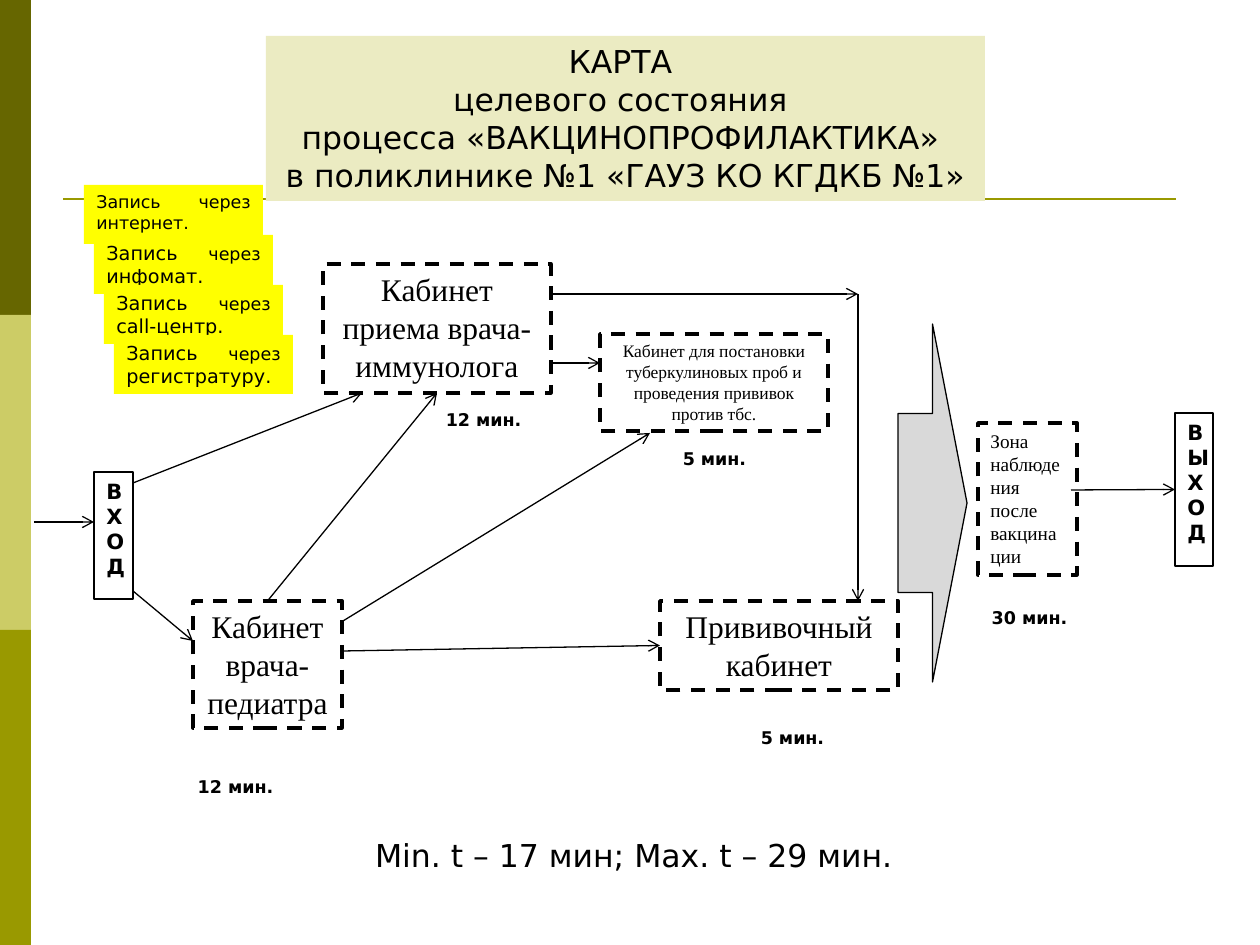
from lxml.etree import SubElement
from pptx import Presentation
from pptx.dml.color import RGBColor
from pptx.enum.dml import MSO_LINE
from pptx.enum.shapes import MSO_CONNECTOR, MSO_SHAPE
from pptx.enum.text import MSO_ANCHOR, MSO_AUTO_SIZE, PP_ALIGN
from pptx.oxml.ns import qn
from pptx.util import Emu, Pt

SCALE = 914400 / 126
BLACK = RGBColor(0x00, 0x00, 0x00)
WHITE = RGBColor(0xFF, 0xFF, 0xFF)
YELLOW = RGBColor(0xFF, 0xFF, 0x00)
CREAM = RGBColor(0xEB, 0xEB, 0xC2)
GREY = RGBColor(0xD9, 0xD9, 0xD9)
DARK_OLIVE = RGBColor(0x66, 0x66, 0x00)
LIGHT_OLIVE = RGBColor(0xCC, 0xCC, 0x66)
OLIVE = RGBColor(0x99, 0x99, 0x00)
SANS = "DejaVu Sans"
SERIF = "Times New Roman"
TOP, LEFT, BOTTOM = 0, 1, 2


def px(value):
    """Turn pixels into EMU."""
    return Emu(round(value * SCALE))


def set_all(target, values):
    """Set every attribute named in a dict of format values."""
    for name, value in values.items():
        setattr(target, name, value)


def write(shape, paragraphs, font, align=PP_ALIGN.CENTER, wrap=True):
    """Write paragraphs, each a list of (text, size) runs, into a shape."""
    frame = shape.text_frame
    set_all(frame, {
        "word_wrap": wrap,
        "vertical_anchor": MSO_ANCHOR.TOP,
        "auto_size": MSO_AUTO_SIZE.NONE if wrap else MSO_AUTO_SIZE.SHAPE_TO_FIT_TEXT,
    })
    for index, runs in enumerate(paragraphs):
        paragraph = frame.add_paragraph() if index else frame.paragraphs[0]
        paragraph.alignment = align
        for text, size in runs:
            run = paragraph.add_run()
            run.text = text
            set_all(run.font, {"size": Pt(size), **font})
            run.font.color.rgb = BLACK


def add_block(slide, box, fill, line_width=0, dash=None, kind=MSO_SHAPE.RECTANGLE):
    """Add a filled preset shape, outlined in black when a width is given."""
    shape = slide.shapes.add_shape(kind, *map(px, box))
    shape.shadow.inherit = False
    shape.fill.solid()
    shape.fill.fore_color.rgb = fill
    if line_width:
        shape.line.color.rgb = BLACK
        set_all(shape.line, {"width": Pt(line_width), "dash_style": dash})
    else:
        shape.line.fill.background()
    return shape


def add_line(slide, start, end, color=BLACK, width=0.75, arrow=True):
    """Add a straight line, with an open arrowhead at its end by default."""
    connector = slide.shapes.add_connector(MSO_CONNECTOR.STRAIGHT, *map(px, (*start, *end)))
    connector.line.color.rgb = color
    connector.line.width = Pt(width)
    if arrow:
        SubElement(connector.line._get_or_add_ln(), qn("a:tailEnd"), type="arrow")
    SubElement(connector._element.spPr, qn("a:effectLst"))
    return connector


def add_label(slide, box, text, size, bold):
    """Add a one-line text box."""
    label = slide.shapes.add_textbox(*map(px, box))
    write(label, [[(text, size)]], {"name": SANS, "bold": bold}, wrap=False)


def add_sidebar(slide, box):
    """Add three stacked colour bands."""
    left, top, width, height = box
    band = height // 3
    for index, color in enumerate((DARK_OLIVE, LIGHT_OLIVE, OLIVE)):
        add_block(slide, (left, top + index * band, width, band), color)


def add_header(slide, box):
    """Add the rule and the title panel standing on it."""
    left, top, width, height = box
    rule = top + height - 2
    add_line(slide, (left, rule), (left + width, rule), OLIVE, 1.5, arrow=False)
    panel = add_block(slide, (left + 203, top, 719, height), CREAM)
    lines = (
        "КАРТА ",
        "целевого состояния ",
        "процесса «ВАКЦИНОПРОФИЛАКТИКА» ",
        "в поликлинике №1 «ГАУЗ КО КГДКБ №1»",
    )
    write(panel, [[(line, 18)] for line in lines], {"name": SANS}, wrap=False)


def add_booking_notes(slide, box):
    """Add the cascade of yellow notes on ways to book."""
    left, top, width, height = box
    notes = (("интернет.", 10), ("инфомат.", 11), ("call-центр.", 11), ("регистратуру.", 11))
    for index, (channel, size) in enumerate(notes):
        note_box = (left + 10 * index, top + 50 * index, width, height)
        note = add_block(slide, note_box, YELLOW)
        runs = [("Запись ", size), ("через", 10), (" " + channel, size)]
        write(note, [runs], {"name": SANS}, PP_ALIGN.JUSTIFY)


def add_route_map(slide, box):
    """Add the doors, rooms, arrows and durations of the patient route."""
    left, top, width, height = box

    def at(x, y, *size):
        return (left + x, top + y, *size)

    def room(place, text, size, align=PP_ALIGN.CENTER):
        shape = add_block(slide, at(*place), WHITE, 2, MSO_LINE.DASH)
        write(shape, [[(text, size)]], {"name": SERIF}, align)
        return shape

    def door(place, text):
        shape = add_block(slide, at(*place), WHITE, 0.75)
        write(shape, [[(text, 12)]], {"name": SANS, "bold": True}, PP_ALIGN.LEFT)
        return shape

    door((60, 208, 39, 127), "ВХОД")
    pediatrician = room((159, 337, 149, 127), "Кабинет врача-педиатра", 18)
    immunologist = room((289, 0, 228, 129), "Кабинет приема врача-иммунолога", 18)
    vaccination = room((626, 337, 238, 89), "Прививочный кабинет", 18)
    room((944, 159, 99, 152), "Зона наблюдения после вакцинации", 11, PP_ALIGN.JUSTIFY)
    room((566, 70, 228, 97),
         "Кабинет для постановки туберкулиновых проб и проведения прививок против тбс.", 10)
    exit_door = door((width - 39, 149, 38, 153), "ВЫХОД")
    add_block(slide, at(864, 60, 69, 358), GREY, 0.75, kind=MSO_SHAPE.RIGHT_ARROW)

    arrows = (
        ((0, 258), (60, 258), None, None),
        ((99, 327), (159, 377), None, None),
        ((99, 219), (328, 129), None, None),
        ((517, 99), (566, 99), None, None),
        ((517, 30), (824, 30), None, None),
        ((824, 30), (824, 337), None, None),
        ((309, 357), (616, 169), None, None),
        ((233, 337), (403, 129), (pediatrician, TOP), (immunologist, BOTTOM)),
        ((309, 387), (626, 382), None, (vaccination, LEFT)),
        ((1037, 226), (1141, 225), None, (exit_door, LEFT)),
    )
    for start, end, source, target in arrows:
        connector = add_line(slide, at(*start), at(*end))
        if source:
            connector.begin_connect(*source)
        if target:
            connector.end_connect(*target)

    durations = (
        ((150, 506, 103), "12 мин."),
        ((398, 139, 103), "12 мин."),
        ((635, 178, 91), "5 мин."),
        ((713, 457, 91), "5 мин."),
        ((944, 337, 103), "30 мин."),
    )
    for place, text in durations:
        add_label(slide, at(*place, 34), text, 10, True)


def add_summary(slide, box):
    """Add the line of total times."""
    add_label(slide, box, "Min. t – 17 мин; Max. t – 29 мин.", 18, False)


def main():
    """Build and save the slide."""
    presentation = Presentation()
    set_all(presentation, {"slide_width": px(1260), "slide_height": px(945)})
    slide = presentation.slides.add_slide(presentation.slide_layouts[6])
    add_sidebar(slide, (0, 0, 31, 945))
    add_header(slide, (63, 36, 1113, 165))
    add_booking_notes(slide, (84, 185, 179, 59))
    add_route_map(slide, (34, 264, 1180, 540))
    add_summary(slide, (350, 830, 568, 50))
    presentation.save("out.pptx")


if __name__ == "__main__":
    main()
